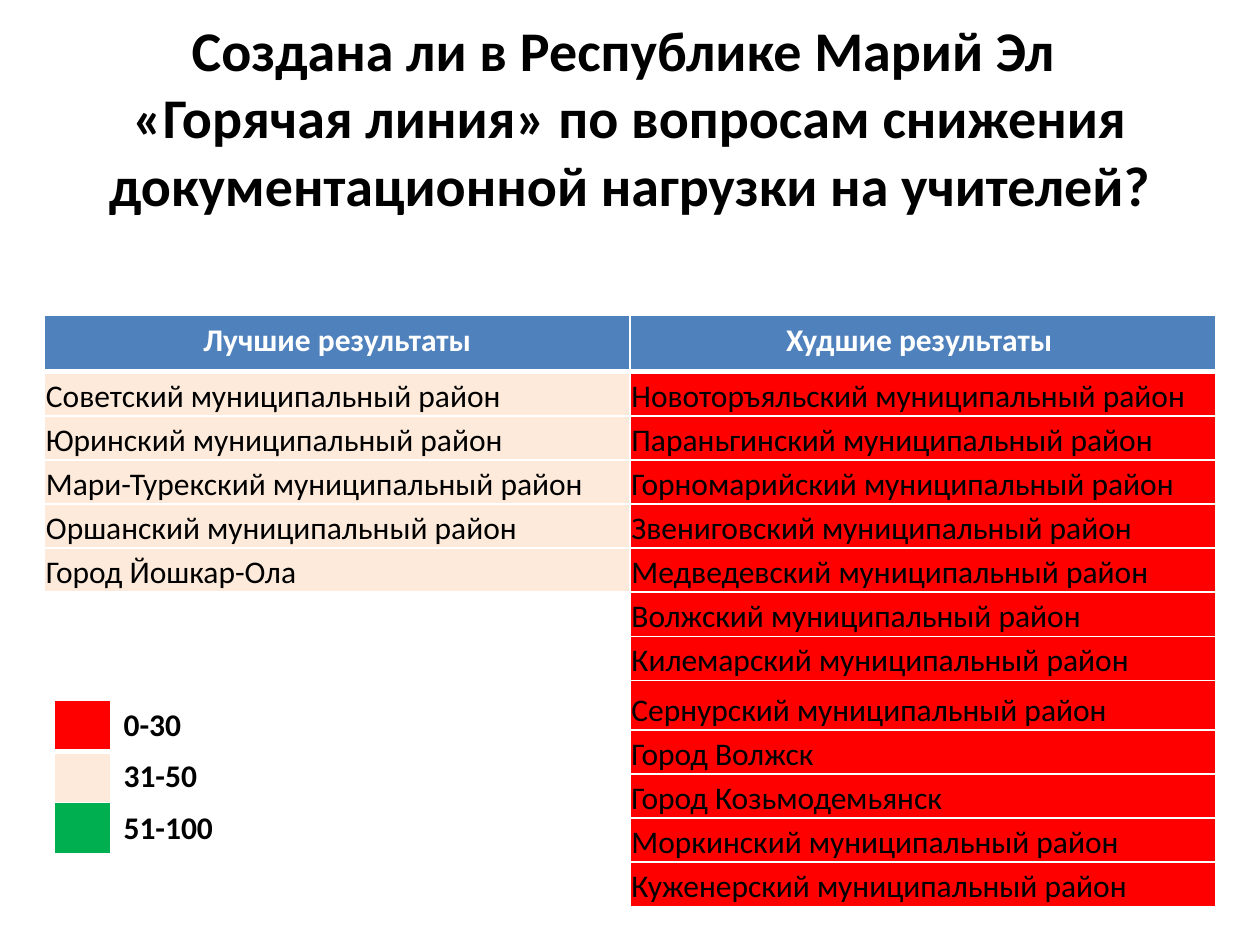
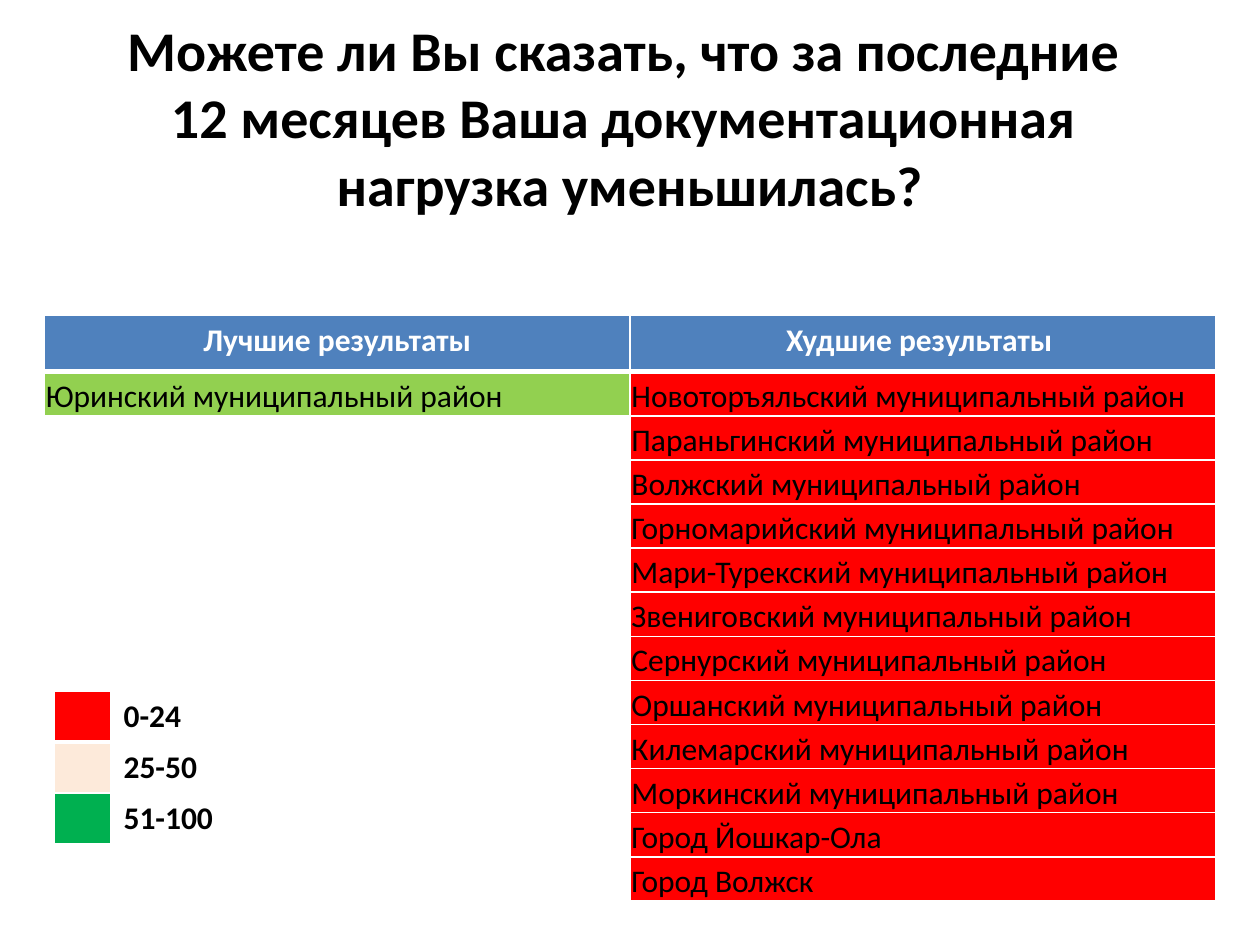
from lxml.etree import SubElement
from pptx import Presentation
from pptx.dml.color import RGBColor
from pptx.enum.text import MSO_ANCHOR as Anchor, PP_ALIGN as Align
from pptx.oxml.ns import qn
from pptx.util import Pt

COLORS = {
    "text": "000000",
    "white": "FFFFFF",
    "header": "4F81BD",
    "low": "FF0000",
    "middle": "FDEADA",
    "high": "00B050",
    "best": "92D050",
}
FONT = "Calibri"
HEADERS = ["Лучшие результаты", "Худшие результаты "]
HEADER_HEIGHT, ROW_HEIGHT = 32.4, 25.2
COLUMN_WIDTH = 334.6
LEGEND_WIDTHS = [32.4, 115.2]
LEGEND_ROW_HEIGHT = 29.2

SURVEYS = [
    {
        "title": "Создана ли в Республике Марий Эл \n«Горячая линия» по вопросам снижения "
                 "документационной нагрузки на учителей?",
        "best": [
            "Советский муниципальный район",
            "Юринский муниципальный район",
            "Мари-Турекский муниципальный район",
            "Оршанский муниципальный район",
            "Город Йошкар-Ола",
        ],
        "best_color": "middle",
        "worst": [
            "Новоторъяльский муниципальный район",
            "Параньгинский муниципальный район",
            "Горномарийский муниципальный район",
            "Звениговский муниципальный район",
            "Медведевский муниципальный район",
            "Волжский муниципальный район",
            "Килемарский муниципальный район",
            "Сернурский муниципальный район",
            "Город Волжск",
            "Город Козьмодемьянск",
            "Моркинский муниципальный район",
            "Куженерский муниципальный район",
        ],
        "tall_rows": {8: 28.3},
        "ranges": ["0-30", "31-50", "51-100"],
        "legend_top": 400.3,
    },
    {
        "title": "Можете ли Вы сказать, что за последние \n12 месяцев Ваша документационная \n"
                 "нагрузка уменьшилась?",
        "best": ["Юринский муниципальный район"],
        "best_color": "best",
        "worst": [
            "Новоторъяльский муниципальный район",
            "Параньгинский муниципальный район",
            "Волжский муниципальный район",
            "Горномарийский муниципальный район",
            "Мари-Турекский муниципальный район",
            "Звениговский муниципальный район",
            "Сернурский муниципальный район",
            "Оршанский муниципальный район",
            "Килемарский муниципальный район",
            "Моркинский муниципальный район",
            "Город Йошкар-Ола",
            "Город Волжск",
        ],
        "tall_rows": {},
        "ranges": ["0-24", "25-50", "51-100"],
        "legend_top": 394.8,
    },
]


def write_text(frame, text, size=18, color="text", bold=False, align=Align.LEFT):
    paragraph = frame.paragraphs[0]
    paragraph.text = text
    paragraph.alignment = align
    for run in paragraph.runs:
        run.font.name = FONT
        run.font.size = Pt(size)
        run.font.bold = bold
        run.font.color.rgb = RGBColor.from_string(COLORS[color])


def style_cell(cell, fill=None, top=1, bottom=1, tight=False):
    properties = cell._tc.get_or_add_tcPr()
    for side, width in (("L", 1), ("R", 1), ("T", top), ("B", bottom)):
        line = SubElement(properties, qn(f"a:ln{side}"), w=str(Pt(width)))
        solid = SubElement(line, qn("a:solidFill"))
        SubElement(solid, qn("a:srgbClr"), val=COLORS["white"])
    if fill:
        cell.fill.solid()
        cell.fill.fore_color.rgb = RGBColor.from_string(COLORS[fill])
    else:
        cell.fill.background()
    if tight:
        cell.margin_left = cell.margin_right = cell.margin_top = Pt(0.75)
        cell.margin_bottom = Pt(0)
        cell.vertical_anchor = Anchor.BOTTOM


presentation = Presentation()
presentation.slide_width = Pt(720)
presentation.slide_height = Pt(540)

for survey in SURVEYS:
    slide = presentation.slides.add_slide(presentation.slide_layouts[6])

    title = slide.shapes.add_textbox(Pt(0), Pt(21.6), Pt(720), Pt(90)).text_frame
    title.word_wrap = True
    title.vertical_anchor = Anchor.MIDDLE
    write_text(title, survey["title"], size=32, bold=True, align=Align.CENTER)

    row_count = len(survey["worst"]) + 1
    results = slide.shapes.add_table(
        row_count, 2, Pt(25.5), Pt(180), Pt(2 * COLUMN_WIDTH),
        Pt(HEADER_HEIGHT + (row_count - 1) * ROW_HEIGHT)).table
    results.horz_banding = False
    results.rows[0].height = Pt(HEADER_HEIGHT)
    for row in range(1, row_count):
        results.rows[row].height = Pt(survey["tall_rows"].get(row, ROW_HEIGHT))

    groups = [(survey["best"], survey["best_color"]), (survey["worst"], "low")]
    for column, (districts, color) in enumerate(groups):
        results.columns[column].width = Pt(COLUMN_WIDTH)
        header = results.cell(0, column)
        style_cell(header, "header", bottom=3)
        write_text(header.text_frame, HEADERS[column], color="white", bold=True, align=Align.CENTER)
        for row in range(1, row_count):
            cell = results.cell(row, column)
            filled = row <= len(districts)
            style_cell(cell, color if filled else None, top=3 if row == 1 else 1, tight=True)
            if filled:
                write_text(cell.text_frame, districts[row - 1])

    legend = slide.shapes.add_table(
        3, 2, Pt(31), Pt(survey["legend_top"]), Pt(sum(LEGEND_WIDTHS)),
        Pt(3 * LEGEND_ROW_HEIGHT)).table
    legend.horz_banding = False
    for column, width in enumerate(LEGEND_WIDTHS):
        legend.columns[column].width = Pt(width)
    for row, (label, color) in enumerate(zip(survey["ranges"], ["low", "middle", "high"])):
        legend.rows[row].height = Pt(LEGEND_ROW_HEIGHT)
        for column, fill in enumerate([color, "white"]):
            style_cell(legend.cell(row, column), fill,
                       top=3 if row == 1 else 1, bottom=3 if row == 0 else 1)
        write_text(legend.cell(row, 1).text_frame, label, bold=True)

presentation.save("out.pptx")
